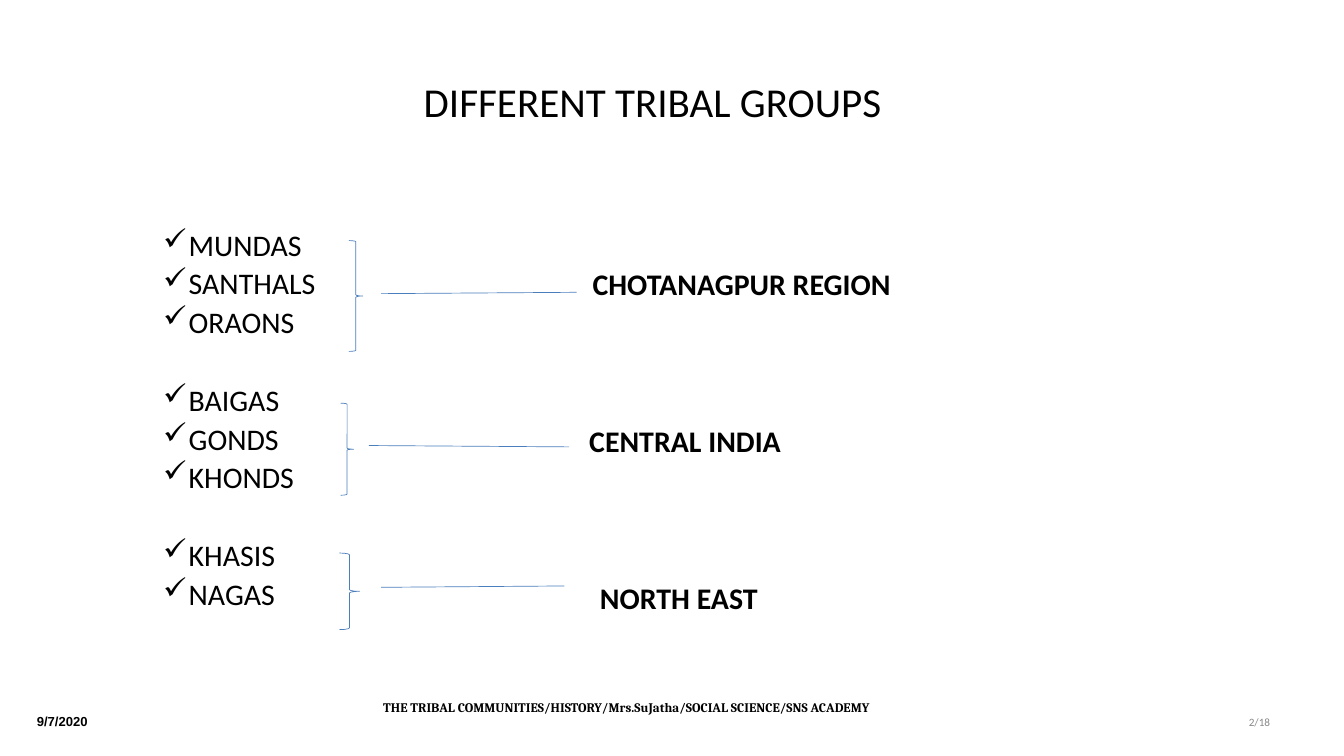
from lxml.etree import SubElement
from pptx import Presentation
from pptx.dml.color import RGBColor
from pptx.enum.shapes import MSO_CONNECTOR, MSO_SHAPE
from pptx.enum.text import MSO_ANCHOR, PP_ALIGN
from pptx.oxml.ns import qn
from pptx.util import Inches, Pt

TITLE = "DIFFERENT TRIBAL GROUPS"
# tribes, region, region text left, brace box, line ends (inches)
GROUPS = [
    (["MUNDAS", "SANTHALS", "ORAONS"], "CHOTANAGPUR REGION", 8.82,
     (5.19, 3.58, 0.21, 1.65), (5.67, 4.37, 8.58, 4.35)),
    (["BAIGAS", "GONDS", "KHONDS"], "CENTRAL INDIA", 8.77,
     (5.07, 6, 0.19, 1.37), (5.49, 6.63, 8.47, 6.65)),
    (["KHASIS", "NAGAS"], "NORTH EAST", 8.93,
     (5.05, 8.23, 0.3, 1.14), (5.67, 8.74, 8.4, 8.72)),
]
# text, box, font, size, bold, colour, alignment
FOOTERS = [
    ("9/7/2020", (0.45, 10.57, 0.96, 0.34), "Arial", 14, True, "000000", PP_ALIGN.LEFT),
    ("THE TRIBAL COMMUNITIES/HISTORY/Mrs.SuJatha/SOCIAL SCIENCE/SNS ACADEMY",
     (5.07, 10.28, 8.51, 0.5), "Cambria", 14, True, "000000", PP_ALIGN.CENTER),
    ("2/18", (16.67, 10.54, 2.33, 0.4), "Calibri", 12, False, "888888", PP_ALIGN.RIGHT),
]
LIST_LEFT, LIST_TOP = 2.21, 3.32
ROW = 0.584  # one text line with its gap
ROW_GAP = 3  # points
ROWS_PER_GROUP = 4
INSET = 0.1
BLACK, BLUE = "000000", "4B7EBC"


def colour(hex_string):
    return RGBColor.from_string(hex_string)


def style(paragraph, font, size, bold=False, hex_string=BLACK):
    paragraph.font.name = font
    paragraph.font.size = Pt(size)
    paragraph.font.bold = bold
    paragraph.font.color.rgb = colour(hex_string)


def add_text_box(slide, box, anchor=MSO_ANCHOR.TOP):
    frame = slide.shapes.add_textbox(*map(Inches, box)).text_frame
    frame.word_wrap = True
    frame.vertical_anchor = anchor
    return frame


def add_check_bullet(paragraph):
    properties = paragraph._p.get_or_add_pPr()
    properties.set("marL", str(Inches(0.5)))
    properties.set("indent", str(Inches(-0.38)))
    SubElement(properties, qn("a:buChar")).set("char", "✓")


def add_tribe_list(slide):
    frame = add_text_box(slide, (LIST_LEFT, LIST_TOP, 3, 6.4))
    for group_index, (tribes, *_) in enumerate(GROUPS):
        for tribe_index, tribe in enumerate(tribes):
            first = group_index == tribe_index == 0
            paragraph = frame.paragraphs[0] if first else frame.add_paragraph()
            paragraph.text = tribe
            add_check_bullet(paragraph)
            if not first:
                skipped_row = ROW * 72 if tribe_index == 0 else 0
                paragraph.space_before = Pt(ROW_GAP + skipped_row)
            style(paragraph, "Calibri", 32)


def add_region(slide, row, region, left, brace_box, line_ends):
    top = LIST_TOP + row * ROW
    paragraph = add_text_box(slide, (left - INSET, top, 5.5, 0.64)).paragraphs[0]
    paragraph.text = region
    style(paragraph, "Calibri", 32, bold=True)

    brace = slide.shapes.add_shape(MSO_SHAPE.RIGHT_BRACE, *map(Inches, brace_box))
    brace.shadow.inherit = False
    brace.fill.background()
    connector = slide.shapes.add_connector(MSO_CONNECTOR.STRAIGHT, *map(Inches, line_ends))
    SubElement(connector._element.spPr, qn("a:effectLst"))
    for shape in (brace, connector):
        shape.line.color.rgb = colour(BLUE)
        shape.line.width = Pt(0.75)


def main():
    presentation = Presentation()
    presentation.slide_width, presentation.slide_height = Inches(20), Inches(11.25)
    slide = presentation.slides.add_slide(presentation.slide_layouts[5])

    title = slide.shapes.title
    title.left, title.top, title.width, title.height = map(Inches, (4.63, 0.88, 10.17, 1.25))
    title.text_frame.text = TITLE
    title.text_frame.vertical_anchor = MSO_ANCHOR.MIDDLE
    paragraph = title.text_frame.paragraphs[0]
    paragraph.alignment = PP_ALIGN.CENTER
    style(paragraph, "Calibri", 44)

    add_tribe_list(slide)
    for index, (_, *region_parts) in enumerate(GROUPS):
        add_region(slide, index * ROWS_PER_GROUP + 1, *region_parts)

    for text, box, font, size, bold, hex_string, alignment in FOOTERS:
        paragraph = add_text_box(slide, box, MSO_ANCHOR.MIDDLE).paragraphs[0]
        paragraph.text = text
        paragraph.alignment = alignment
        style(paragraph, font, size, bold, hex_string)

    presentation.save("out.pptx")


if __name__ == "__main__":
    main()
